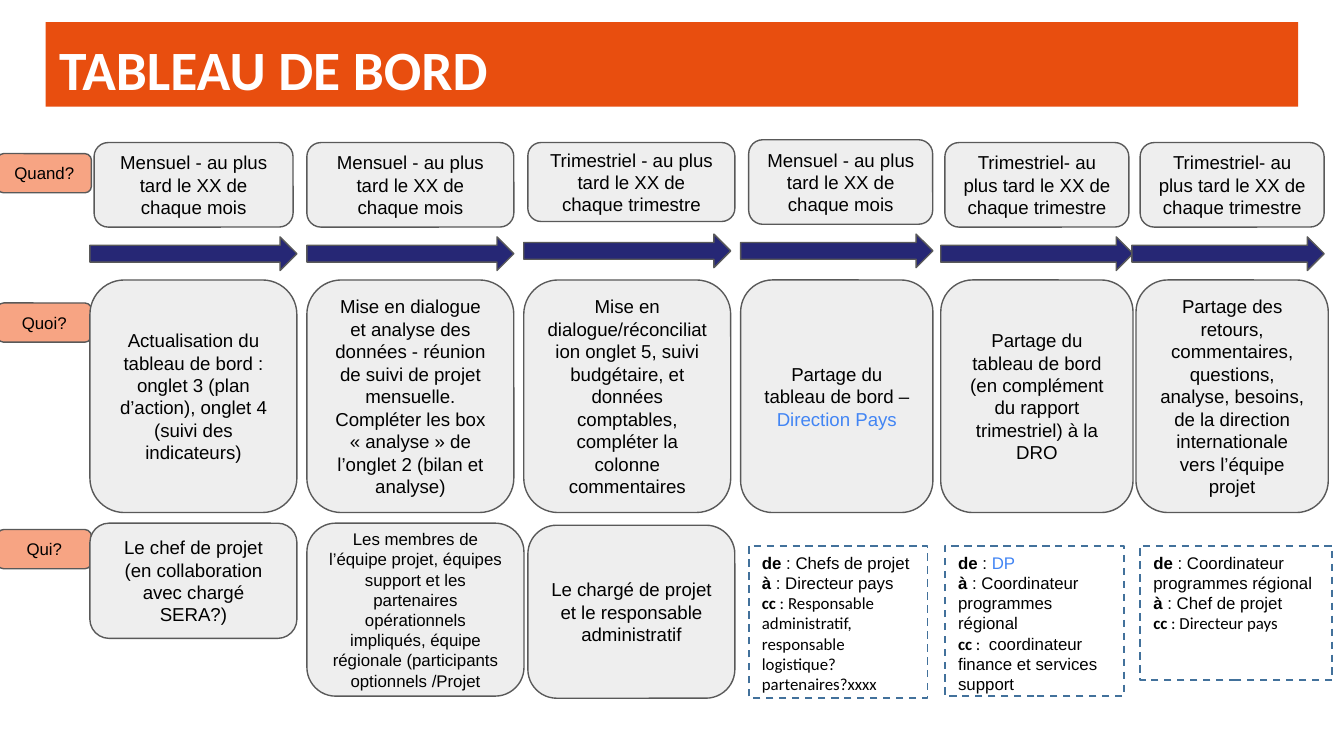
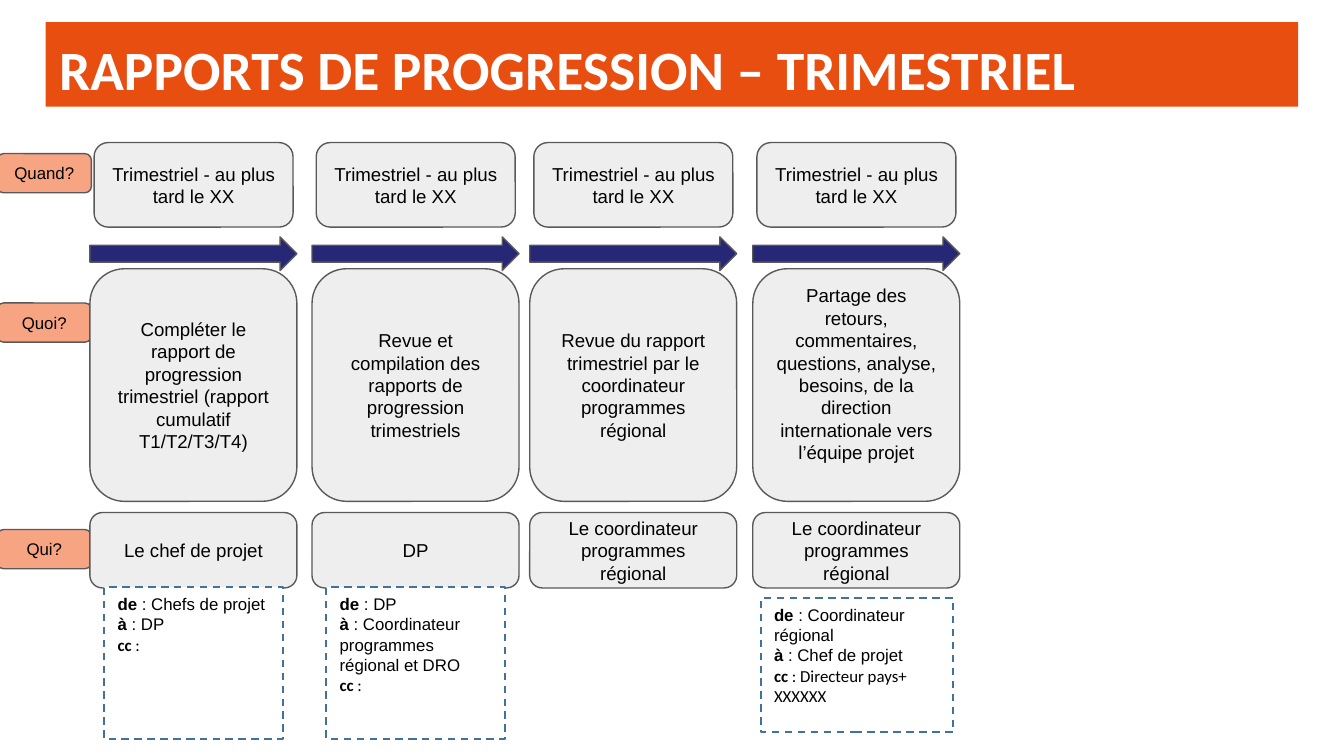
from dataclasses import dataclass, field

from pptx import Presentation
from pptx.dml.color import RGBColor
from pptx.enum.dml import MSO_LINE
from pptx.enum.shapes import MSO_SHAPE
from pptx.enum.text import MSO_ANCHOR, MSO_AUTO_SIZE, PP_ALIGN
from pptx.util import Pt

ORANGE, PEACH, GREY, NAVY = "E84E0F", "F7A483", "EEEEEE", "262775"
OUTLINE, DASH_BLUE, LINK_BLUE = "595959", "42719B", "4285F4"
WHITE, BLACK = "FFFFFF", "000000"

TITLE_BOX = (24.5, 11.8, 671, 45.3)
ROW_LABELS = [("Quand?", 82.3), ("Quoi?", 162.3), ("Qui?", 283.7)]
WHAT_HEIGHT, ARROW_HEIGHT = 124.6, 18


@dataclass
class Stage:
    """One column. Boxes are (offset from left, top, width, height).

    Texts are lists of paragraphs, each a list of (text, colour) runs or strings.
    """
    left: float
    when: str
    what: list
    who: str = ""
    mail: dict = field(default_factory=dict)
    width: float = 110.9
    when_box: tuple = (2.2, 76.4, 106.6, 45.3)
    arrow_top: float = 126.9
    arrow_shift: float = 0
    what_top: float = 150
    what_lift: float = 0
    who_box: tuple = (0, 274.6, 110.9, 40.4)
    who_size: float = 10
    mail_box: tuple = (0, 0, 0, 0)


MONTHLY = "Mensuel - au plus tard le XX de chaque mois"
QUARTERLY = "Trimestriel- au plus tard le XX de chaque trimestre"
QUARTER_DAY = "Trimestriel - au plus tard le XX"
FEEDBACK = [["Partage des retours, commentaires, questions, analyse, besoins, "
             "de la direction internationale vers l’équipe projet"]]
COORDINATOR = "Le coordinateur programmes régional"

DASHBOARD = [
    Stage(
        48.2, MONTHLY,
        [["Actualisation du tableau de bord : onglet 3 (plan d’action), "
          "onglet 4 (suivi des indicateurs)"]],
        "Le chef de projet (en collaboration avec chargé SERA?)",
        who_box=(0, 280.3, 110.9, 61.7)),
    Stage(
        164.4, MONTHLY,
        [["Mise en dialogue et analyse des données - réunion de suivi "
          "de projet mensuelle."],
         ["Compléter les box « analyse » de l’onglet 2 (bilan et analyse)"]],
        "Les membres de l’équipe projet, équipes support et les partenaires "
        "opérationnels impliqués, équipe régionale (participants optionnels /Projet",
        when_box=(0, 76.4, 110.9, 45.3),
        who_box=(0, 280.3, 116.3, 92.7), who_size=9),
    Stage(
        280.6, "Trimestriel - au plus tard le XX de chaque trimestre",
        [["Mise en dialogue/réconciliation onglet 5, suivi budgétaire, et données "
          "comptables, compléter la colonne commentaires"]],
        "Le chargé de projet et le responsable administratif",
        when_box=(2.2, 76.4, 110.9, 42.3), arrow_top=125.4,
        who_box=(2.2, 281.4, 110.9, 92.7)),
    Stage(
        396.8, MONTHLY,
        [["Partage du tableau de bord – ", ("Direction Pays", LINK_BLUE)]],
        mail={"de": ["Chefs de projet"], "à": ["Directeur pays"],
              "cc": ["Responsable administratif, responsable logistique? "
                     "partenaires?xxxx"]},
        width=103, when_box=(4.3, 74.9, 98.6, 45.3), arrow_top=125.4,
        mail_box=(4.3, 292.4, 95.8, 81.4)),
    Stage(
        504, QUARTERLY,
        [["Partage du tableau de bord (en complément du rapport trimestriel) "
          "à la DRO"]],
        mail={"de": [("DP", LINK_BLUE)],
              "à": ["Coordinateur programmes régional"],
              "cc": [(" coordinateur finance et services support", BLACK, "Arial")]},
        width=103, when_box=(2.2, 76.4, 98.6, 45.3),
        mail_box=(2.2, 292.4, 95.8, 80.6)),
    Stage(
        608.6, QUARTERLY, FEEDBACK,
        mail={"de": ["Coordinateur programmes régional"],
              "à": ["Chef de projet"], "cc": ["Directeur pays"]},
        width=103, when_box=(2.2, 76.4, 98.6, 45.3), arrow_shift=-2.2,
        mail_box=(2.2, 292.4, 103, 72)),
]

PROGRESS = [
    Stage(
        48.2, QUARTER_DAY,
        [["Compléter le rapport de progression trimestriel "
          "(rapport cumulatif T1/T2/T3/T4)"]],
        "Le chef de projet",
        {"de": ["Chefs de projet"], "à": ["DP"], "cc": []},
        what_top=144, mail_box=(7.7, 314.6, 95.8, 81.4)),
    Stage(
        167.2, QUARTER_DAY,
        [["Revue et compilation des rapports de progression trimestriels"]],
        "DP",
        {"de": ["DP"], "à": ["Coordinateur programmes régional et DRO"], "cc": []},
        what_top=144, mail_box=(7.7, 314.6, 95.8, 81.4)),
    Stage(
        283.8, QUARTER_DAY,
        [["Revue du rapport trimestriel par le coordinateur programmes régional"]],
        COORDINATOR, what_top=144),
    Stage(
        403.3, QUARTER_DAY, FEEDBACK, COORDINATOR,
        {"de": ["Coordinateur régional"], "à": ["Chef de projet"],
         "cc": ["Directeur pays+ XXXXXX"]},
        what_top=144, what_lift=12, mail_box=(4.3, 320.4, 103, 72)),
]

SLIDES = [
    ("TABLEAU DE BORD", DASHBOARD),
    ("RAPPORTS DE PROGRESSION – TRIMESTRIEL", PROGRESS),
]


def colour(value):
    return RGBColor.from_string(value)


def paint(shape, fill, line, width=0.75):
    shape.shadow.inherit = False
    shape.fill.solid()
    shape.fill.fore_color.rgb = colour(fill)
    shape.line.color.rgb = colour(line)
    shape.line.width = Pt(width)


def set_margins(text_frame, side, vertical):
    text_frame.word_wrap = True
    text_frame.margin_left = text_frame.margin_right = Pt(side)
    text_frame.margin_top = text_frame.margin_bottom = Pt(vertical)


def add_box(slide, kind, box, fill, line=OUTLINE, width=0.75):
    shape = slide.shapes.add_shape(kind, *map(Pt, box))
    paint(shape, fill, line, width)
    return shape


def add_run(paragraph, text, text_colour=BLACK, font="Arial", size=10, bold=False):
    run = paragraph.add_run()
    run.text = text
    run.font.name, run.font.size, run.font.bold = font, Pt(size), bold
    run.font.color.rgb = colour(text_colour)


def as_run(run):
    return (run,) if isinstance(run, str) else run


def next_paragraph(text_frame, index):
    return text_frame.add_paragraph() if index else text_frame.paragraphs[0]


def add_rounded(slide, box, paragraphs, fill=GREY, size=10, lift=0):
    """Rounded box with centred text; lift is extra room below the text."""
    text_frame = add_box(slide, MSO_SHAPE.ROUNDED_RECTANGLE, box, fill).text_frame
    set_margins(text_frame, 7.2, 7.2)
    text_frame.margin_bottom = Pt(7.2 + lift)
    text_frame.vertical_anchor = MSO_ANCHOR.MIDDLE
    for index, runs in enumerate(paragraphs):
        paragraph = next_paragraph(text_frame, index)
        paragraph.alignment = PP_ALIGN.CENTER
        for run in runs:
            add_run(paragraph, *as_run(run), size=size)


def add_mail(slide, box, mail):
    shape = add_box(slide, MSO_SHAPE.RECTANGLE, box, WHITE, DASH_BLUE, 1)
    shape.line.dash_style = MSO_LINE.DASH
    text_frame = shape.text_frame
    set_margins(text_frame, 7.2, 3.6)
    text_frame.vertical_anchor = MSO_ANCHOR.TOP
    for index, (header, names) in enumerate(mail.items()):
        paragraph = next_paragraph(text_frame, index)
        paragraph.alignment = PP_ALIGN.LEFT
        font = "Calibri" if header == "cc" else "Arial"
        add_run(paragraph, header, font=font, size=9, bold=True)
        add_run(paragraph, " : " if names else " :", font=font, size=9)
        for name in names:
            text, name_colour, name_font = (*as_run(name), BLACK, font)[:3] \
                if isinstance(name, str) else (*name, font)[:3]
            add_run(paragraph, text, name_colour, name_font, size=9)


def add_title(slide, text):
    title = slide.shapes.title
    title.left, title.top, title.width, title.height = map(Pt, TITLE_BOX)
    title.fill.solid()
    title.fill.fore_color.rgb = colour(ORANGE)
    text_frame = title.text_frame
    set_margins(text_frame, 7.2, 7.2)
    text_frame.auto_size = MSO_AUTO_SIZE.NONE
    text_frame.vertical_anchor = MSO_ANCHOR.TOP
    paragraph = text_frame.paragraphs[0]
    paragraph.alignment = PP_ALIGN.LEFT
    add_run(paragraph, text, WHITE, "Calibri", 29.7, True)


def add_stage(slide, stage):
    def place(box):
        return (stage.left + box[0], *box[1:])

    add_rounded(slide, place(stage.when_box), [[stage.when]])
    arrow_box = (stage.arrow_shift, stage.arrow_top, stage.width, ARROW_HEIGHT)
    add_box(slide, MSO_SHAPE.RIGHT_ARROW, place(arrow_box), NAVY)
    what_box = (0, stage.what_top, stage.width, WHAT_HEIGHT)
    add_rounded(slide, place(what_box), stage.what, lift=stage.what_lift)
    if stage.who:
        add_rounded(slide, place(stage.who_box), [[stage.who]], size=stage.who_size)
    if stage.mail:
        add_mail(slide, place(stage.mail_box), stage.mail)


def main():
    presentation = Presentation()
    presentation.slide_width, presentation.slide_height = Pt(720), Pt(405)
    for title, stages in SLIDES:
        slide = presentation.slides.add_slide(presentation.slide_layouts[5])
        add_title(slide, title)
        for label, top in ROW_LABELS:
            add_rounded(slide, (-1.5, top, 50.5, 21), [[label]], PEACH, 9)
        for stage in stages:
            add_stage(slide, stage)
    presentation.save("out.pptx")


if __name__ == "__main__":
    main()
